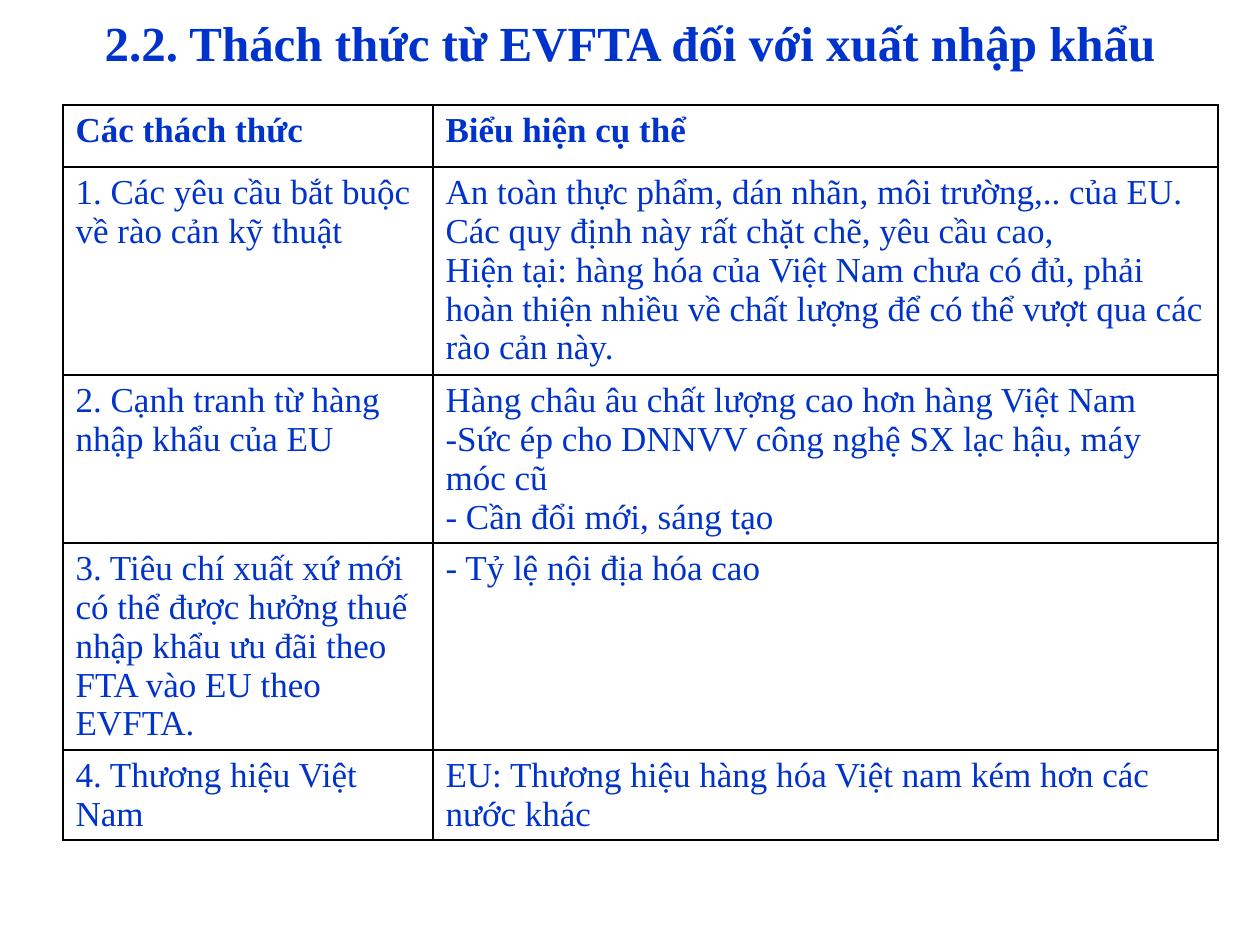
import lxml.etree
import pptx
import pptx.dml.color
import pptx.enum.text
import pptx.oxml.ns
import pptx.util

PX = 914400 // 126
FONT = "Times New Roman"
BLUE, BLACK, WHITE = "0033CC", "000000", "FFFFFF"

TITLE = "2.2. Thách thức từ EVFTA đối với xuất nhập khẩu"
COLUMN_WIDTHS = [370, 785]
ROW_HEIGHTS = [62, 208, 168, 207, 90]
# Each cell is a list of paragraphs.
CHALLENGES = [
    (["Các thách thức"], ["Biểu hiện cụ thể"]),
    (["1. Các yêu cầu bắt buộc về rào cản kỹ thuật"],
     ["An toàn thực phẩm, dán nhãn, môi trường,.. của EU. "
      "Các quy định này rất chặt chẽ, yêu cầu cao,",
      "Hiện tại: hàng hóa của Việt Nam chưa có đủ, phải hoàn thiện nhiều "
      "về chất lượng để có thể vượt qua các rào cản này."]),
    (["2. Cạnh tranh từ hàng nhập khẩu của EU"],
     ["Hàng châu âu chất lượng cao hơn hàng Việt Nam",
      "-Sức ép cho DNNVV công nghệ SX lạc hậu, máy móc cũ",
      "- Cần đổi mới, sáng tạo"]),
    (["3. Tiêu chí xuất xứ mới có thể được hưởng thuế nhập khẩu ưu đãi "
      "theo FTA vào EU theo EVFTA."],
     ["- Tỷ lệ nội địa hóa cao"]),
    (["4. Thương hiệu Việt Nam"],
     ["EU: Thương hiệu hàng hóa Việt nam kém hơn các nước khác"]),
]


def color(hex_string):
    return pptx.dml.color.RGBColor.from_string(hex_string)


def write_text(text_frame, lines, size=20, bold=False, ink=BLUE, align=None):
    """Write one paragraph per line into an empty text frame."""
    for index, line in enumerate(lines):
        paragraph = text_frame.add_paragraph() if index else text_frame.paragraphs[0]
        paragraph.alignment = align
        run = paragraph.add_run()
        run.text = line
        run.font.name = FONT
        run.font.size = pptx.util.Pt(size)
        run.font.bold = bold
        run.font.color.rgb = color(ink)


def set_borders(cell, ink=BLACK, points=1):
    """Draw all four sides; the lines must come before the fill in the XML."""
    properties = cell._tc.get_or_add_tcPr()
    qn = pptx.oxml.ns.qn
    for position, side in enumerate(("lnL", "lnR", "lnT", "lnB")):
        line = lxml.etree.Element(qn(f"a:{side}"), w=str(pptx.util.Pt(points)))
        fill = lxml.etree.SubElement(line, qn("a:solidFill"))
        lxml.etree.SubElement(fill, qn("a:srgbClr"), val=ink)
        properties.insert(position, line)


class SlideBuilder:
    def __init__(self, presentation):
        self.slide = presentation.slides.add_slide(presentation.slide_layouts[5])
        self.slide.background.fill.solid()
        self.slide.background.fill.fore_color.rgb = color(WHITE)

    def title(self, text, left, top, width, height):
        shape = self.slide.shapes.title
        shape.left, shape.top = left * PX, top * PX
        shape.width, shape.height = width * PX, height * PX
        shape.text_frame.vertical_anchor = pptx.enum.text.MSO_ANCHOR.MIDDLE
        write_text(shape.text_frame, [text], size=28, bold=True,
                   align=pptx.enum.text.PP_ALIGN.CENTER)

    def table(self, rows, left, top, widths, heights):
        frame = self.slide.shapes.add_table(
            len(rows), len(widths), left * PX, top * PX,
            sum(widths) * PX, sum(heights) * PX)
        table = frame.table
        for column, width in zip(table.columns, widths):
            column.width = width * PX
        for row, height in zip(table.rows, heights):
            row.height = height * PX
        for row_index, row in enumerate(rows):
            for column_index, lines in enumerate(row):
                cell = table.cell(row_index, column_index)
                cell.fill.solid()
                cell.fill.fore_color.rgb = color(WHITE)
                set_borders(cell)
                write_text(cell.text_frame, lines, bold=row_index == 0)


def main():
    presentation = pptx.Presentation()
    presentation.slide_width = pptx.util.Inches(10)
    presentation.slide_height = pptx.util.Inches(7.5)
    builder = SlideBuilder(presentation)
    builder.title(TITLE, 63, 0, 1134, 84)
    builder.table(CHALLENGES, 63, 105, COLUMN_WIDTHS, ROW_HEIGHTS)
    presentation.save("out.pptx")


if __name__ == "__main__":
    main()
